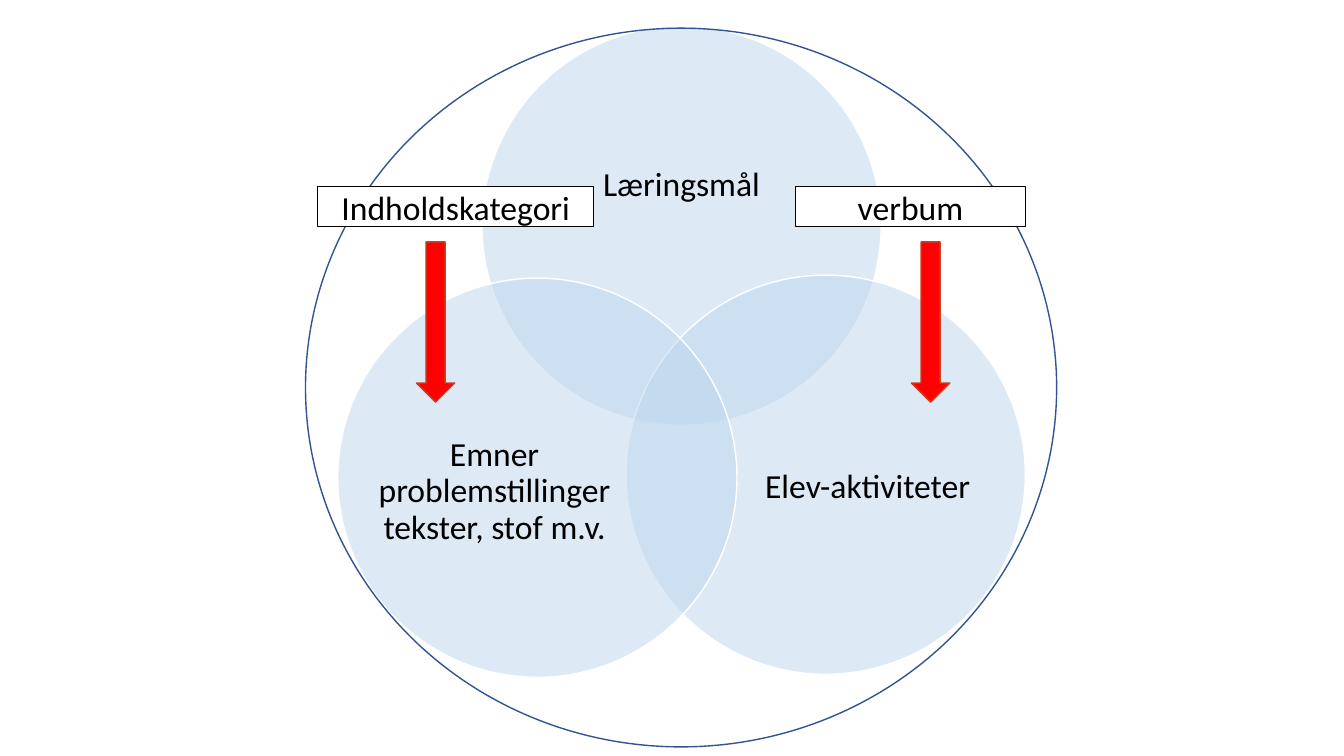
"""Build a Venn diagram slide of learning goals, topics and pupil activities."""
from dataclasses import dataclass

from lxml.etree import SubElement
from pptx import Presentation
from pptx.dml.color import RGBColor
from pptx.enum.shapes import MSO_SHAPE as Shape
from pptx.enum.text import MSO_ANCHOR as Anchor, PP_ALIGN as Align
from pptx.oxml.ns import qn
from pptx.util import Inches, Pt


@dataclass(frozen=True)
class Theme:
    font: str = "Calibri"
    size: float = 24
    ink: str = "000000"
    paper: str = "FFFFFF"
    circle: str = "BDD7EE"
    circle_alpha: int = 50
    ring: str = "325491"
    arrow: str = "FF0000"
    arrow_edge: str = "C74126"
    line: float = 1
    label_line: float = 0.75


THEME = Theme()
DIAMETER = 3.96
CIRCLES = [
    ((4.78, 0.26), "Læringsmål", (5.31, 0.95, 2.9, 1.78)),
    ((6.21, 2.73), "Elev-aktiviteter", (7.42, 3.75, 2.37, 2.18)),
    ((3.35, 2.76), "Emner problemstillinger tekster, stof m.v.", (3.72, 3.79, 2.37, 2.18)),
]
RING = (3.03, 0.28, 7.45, 7.13)
LABEL_TOP, LABEL_HEIGHT = 1.85, 0.4
LABELS = [("Indholdskategori", 3.15, 2.74), ("verbum", 7.89, 2.28)]
ARROW_TOP, ARROW_WIDTH, ARROW_HEIGHT = 2.4, 0.38, 1.59
ARROW_LEFTS = [4.13, 9.04]


def add_figure(page, kind, area, fill, edge, width=THEME.line):
    figure = page.shapes.add_shape(kind, *map(Inches, area))
    figure.shadow.inherit = False
    if fill:
        figure.fill.solid()
        figure.fill.fore_color.rgb = RGBColor.from_string(fill)
    else:
        figure.fill.background()
    figure.line.color.rgb = RGBColor.from_string(edge)
    figure.line.width = Pt(width)
    return figure


def make_translucent(figure, percent):
    color = figure.fill._xPr.find(qn("a:solidFill"))[0]
    SubElement(color, qn("a:alpha")).set("val", str(percent * 1000))


def write(box, text, spacing=1.0):
    frame = box.text_frame
    frame.word_wrap = True
    frame.vertical_anchor = Anchor.MIDDLE
    frame.margin_left = frame.margin_right = frame.margin_top = frame.margin_bottom = 0
    para = frame.paragraphs[0]
    para.alignment = Align.CENTER
    para.line_spacing = spacing
    span = para.add_run()
    span.text = text
    span.font.name = THEME.font
    span.font.size = Pt(THEME.size)
    span.font.color.rgb = RGBColor.from_string(THEME.ink)


def main():
    deck = Presentation()
    deck.slide_width, deck.slide_height = Inches(13.33), Inches(7.5)
    page = deck.slides.add_slide(deck.slide_layouts[6])

    for corner, text, text_area in CIRCLES:
        area = (*corner, DIAMETER, DIAMETER)
        circle = add_figure(page, Shape.OVAL, area, THEME.circle, THEME.paper)
        make_translucent(circle, THEME.circle_alpha)
        write(page.shapes.add_textbox(*map(Inches, text_area)), text, 0.9)

    add_figure(page, Shape.OVAL, RING, None, THEME.ring)

    for text, left, width in LABELS:
        area = (left, LABEL_TOP, width, LABEL_HEIGHT)
        label = add_figure(page, Shape.RECTANGLE, area, THEME.paper, THEME.ink, THEME.label_line)
        write(label, text)

    for left in ARROW_LEFTS:
        area = (left, ARROW_TOP, ARROW_WIDTH, ARROW_HEIGHT)
        add_figure(page, Shape.DOWN_ARROW, area, THEME.arrow, THEME.arrow_edge)

    deck.save("out.pptx")


if __name__ == "__main__":
    main()
